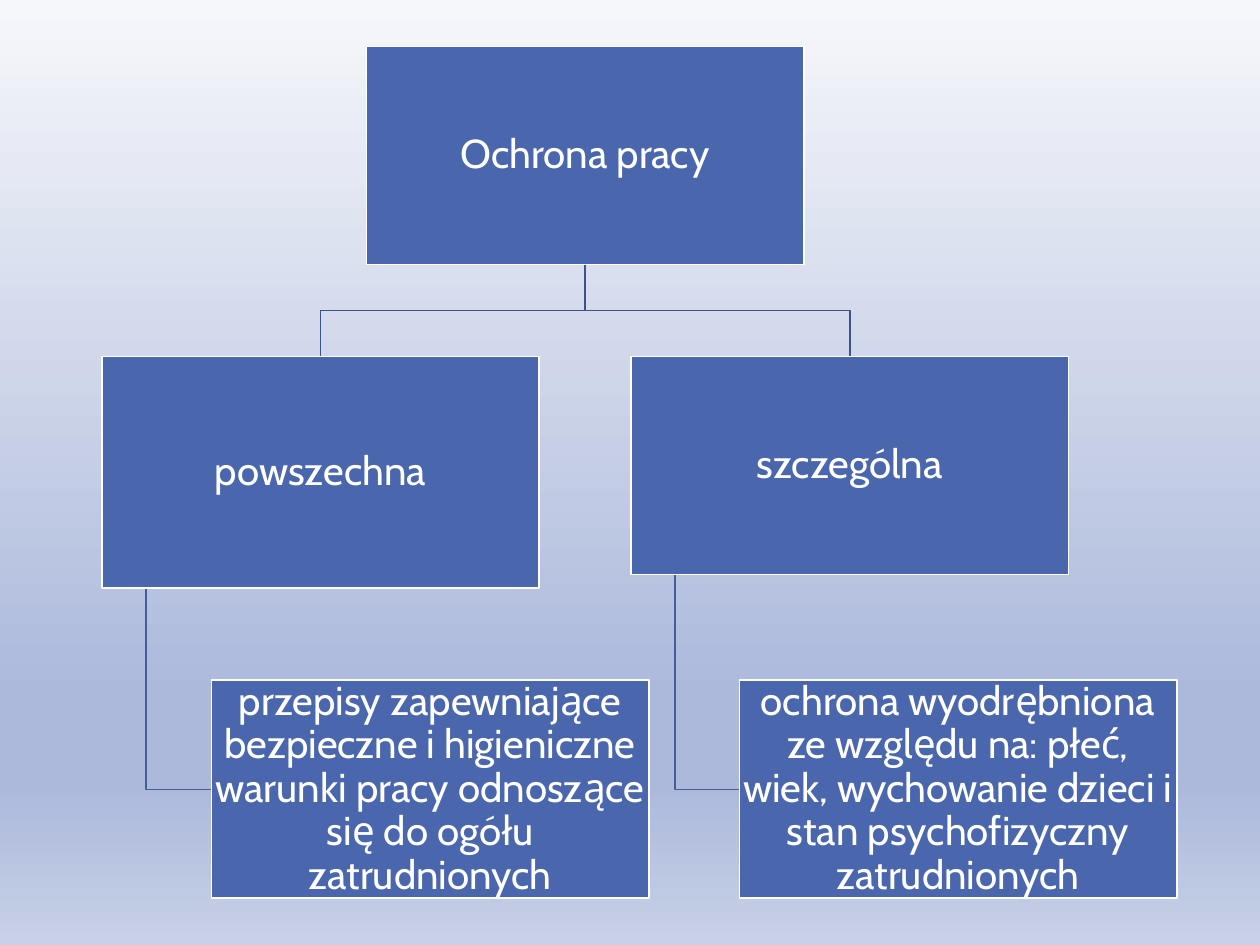
"""Builds a one-slide hierarchy chart about labour protection."""
from lxml import etree
from pptx import Presentation
from pptx.dml.color import RGBColor
from pptx.enum.shapes import MSO_SHAPE
from pptx.enum.text import MSO_ANCHOR, PP_ALIGN
from pptx.oxml.ns import qn
from pptx.util import Inches, Pt

RECTANGLE = MSO_SHAPE.RECTANGLE
MIDDLE = MSO_ANCHOR.MIDDLE
CENTER = PP_ALIGN.CENTER

BACKGROUND = [(0, "F6F7FB"), (74, "ACB9DB"), (83, "ACB9DB"), (100, "C8D1E7")]
BOX_WIDTH, BOX_HEIGHT = 3.47, 1.73
ROOT_LEFT, ROOT_TOP = 2.91, 0.37
BRANCH_TOP, LEAF_TOP = 2.83, 5.4
STEM_INSET = BOX_WIDTH / 10
BRANCHES = [
    (0.81, 1.84, "powszechna", 1.68,
     "przepisy zapewniające bezpieczne i higieniczne warunki pracy "
     "odnoszące się do ogółu zatrudnionych"),
    (5.01, BOX_HEIGHT, "szczególna", 5.87,
     "ochrona wyodrębniona ze względu na: płeć, wiek, wychowanie dzieci "
     "i stan psychofizyczny zatrudnionych"),
]


def color(value):
    return RGBColor.from_string(value)


class Chart:
    font, size = "Cabin", 23
    fill, white = "4A66AC", "FFFFFF"

    def __init__(self, page):
        self.page = page

    def background(self, stops):
        fill = self.page.background.fill
        fill.gradient()
        fill.gradient_angle = 270
        stop_list = next(self.page.element.iter(qn("a:gsLst")))
        for stop in list(stop_list):
            stop_list.remove(stop)
        for position, value in stops:
            stop = etree.SubElement(stop_list, qn("a:gs"), pos=str(position * 1000))
            etree.SubElement(stop, qn("a:srgbClr"), val=value)

    def line(self, points, value):
        start, *others = [(Inches(x), Inches(y)) for x, y in points]
        builder = self.page.shapes.build_freeform(*start)
        builder.add_line_segments(others, close=False)
        line = builder.convert_to_shape()
        line.shadow.inherit = False
        line.fill.background()
        line.line.color.rgb = color(value)
        line.line.width = Pt(1)

    def box(self, left, top, text, height=BOX_HEIGHT):
        box = self.page.shapes.add_shape(
            RECTANGLE, Inches(left), Inches(top), Inches(BOX_WIDTH), Inches(height))
        box.shadow.inherit = False
        box.fill.solid()
        box.fill.fore_color.rgb = color(self.fill)
        box.line.color.rgb = color(self.white)
        box.line.width = Pt(1)
        frame = box.text_frame
        frame.word_wrap = True
        frame.vertical_anchor = MIDDLE
        frame.margin_left = frame.margin_right = Inches(0.02)
        frame.margin_top = frame.margin_bottom = Inches(0.02)
        para = frame.paragraphs[0]
        para.text = text
        para.alignment = CENTER
        para.line_spacing = 0.9
        para.font.name = self.font
        para.font.size = Pt(self.size)
        para.font.color.rgb = color(self.white)


def main():
    deck = Presentation()
    deck.slide_width, deck.slide_height = Inches(10), Inches(7.5)
    chart = Chart(deck.slides.add_slide(deck.slide_layouts[6]))
    chart.background(BACKGROUND)

    root_x, root_bottom = ROOT_LEFT + BOX_WIDTH / 2, ROOT_TOP + BOX_HEIGHT
    fork_y = (root_bottom + BRANCH_TOP) / 2
    leaf_y = LEAF_TOP + BOX_HEIGHT / 2
    for left, height, _, leaf_left, _ in BRANCHES:
        branch_x, stem_x = left + BOX_WIDTH / 2, left + STEM_INSET
        chart.line([(root_x, root_bottom), (root_x, fork_y),
                    (branch_x, fork_y), (branch_x, BRANCH_TOP)], "3B528A")
        chart.line([(stem_x, BRANCH_TOP + height), (stem_x, leaf_y),
                    (leaf_left, leaf_y)], "435D9C")

    chart.box(ROOT_LEFT, ROOT_TOP, "Ochrona pracy")
    for left, height, title, leaf_left, detail in BRANCHES:
        chart.box(left, BRANCH_TOP, title, height)
        chart.box(leaf_left, LEAF_TOP, detail)
    deck.save("out.pptx")


if __name__ == "__main__":
    main()
